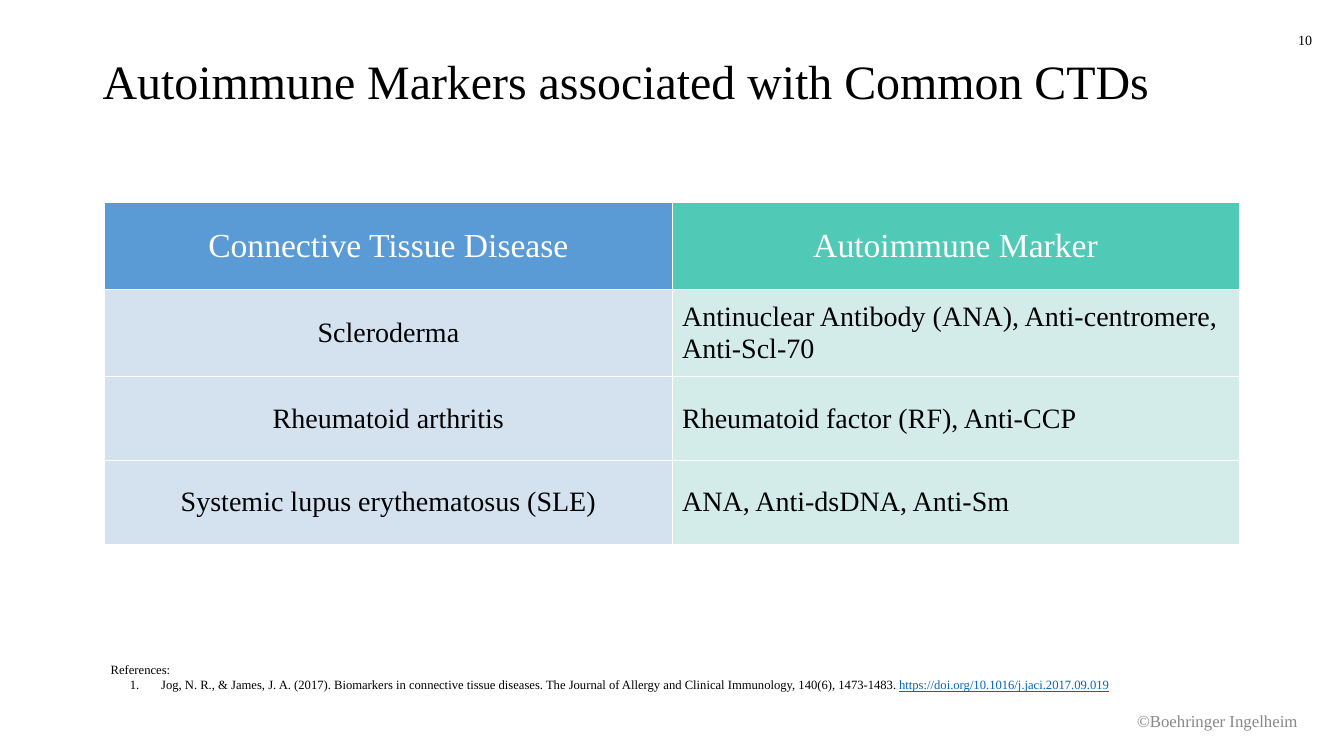
import pptx
import pptx.dml.color
import pptx.enum.text
import pptx.oxml
import pptx.oxml.ns
import pptx.util
from lxml import etree

Inches = pptx.util.Inches
Pt = pptx.util.Pt
RGBColor = pptx.dml.color.RGBColor
ALIGN = pptx.enum.text.PP_ALIGN
MIDDLE = pptx.enum.text.MSO_ANCHOR.MIDDLE
qn = pptx.oxml.ns.qn

FONT = "Times New Roman"
BLACK = RGBColor(0x00, 0x00, 0x00)
WHITE = RGBColor(0xFF, 0xFF, 0xFF)
GRAY = RGBColor(0x88, 0x88, 0x88)
LINK_BLUE = RGBColor(0x05, 0x63, 0xC1)
HEADER_FILLS = (RGBColor(0x5B, 0x9B, 0xD5), RGBColor(0x50, 0xC9, 0xB6))
BODY_FILLS = (RGBColor(0xCF, 0xDE, 0xEF), RGBColor(0xCD, 0xEA, 0xE8))
BODY_OPACITY = 88

TITLE = "Autoimmune Markers associated with Common CTDs"
PAGE_NUMBER = "10"
COPYRIGHT = "©Boehringer Ingelheim"
MARKERS = [
    ("Connective Tissue Disease", "Autoimmune Marker"),
    ("Scleroderma", "Antinuclear Antibody (ANA), Anti-centromere, Anti-Scl-70"),
    ("Rheumatoid arthritis", "Rheumatoid factor (RF), Anti-CCP"),
    ("Systemic lupus erythematosus (SLE)", "ANA, Anti-dsDNA, Anti-Sm"),
]
REFERENCES_HEADING = "References:"
CITATION = (
    "Jog, N. R., & James, J. A. (2017). Biomarkers in connective tissue diseases. "
    "The Journal of Allergy and Clinical Immunology, 140(6), 1473-1483. "
)
CITATION_LINK = "https://doi.org/10.1016/j.jaci.2017.09.019"

TABLE_BOX = (1.04, 2.01, 11.25, 3.35)
HEADER_HEIGHT, BODY_HEIGHT = 0.86, 0.83


def style_font(font, size, color):
    font.name = FONT
    font.size = Pt(size)
    font.color.rgb = color


def add_text(slide, box, text, size, color=BLACK, align=ALIGN.LEFT):
    shape = slide.shapes.add_textbox(*map(Inches, box))
    frame = shape.text_frame
    frame.word_wrap = True
    frame.vertical_anchor = MIDDLE
    frame.text = text
    for paragraph in frame.paragraphs:
        paragraph.alignment = align
        style_font(paragraph.runs[0].font, size, color)
    return frame


def add_borders(cell):
    properties = cell._tc.get_or_add_tcPr()
    for side in ("lnL", "lnR", "lnT", "lnB"):
        line = etree.SubElement(properties, qn(f"a:{side}"), w=str(Pt(0.75)))
        fill = etree.SubElement(line, qn("a:solidFill"))
        etree.SubElement(fill, qn("a:srgbClr"), val=str(WHITE))


def fill_cell(cell, color, opacity=100):
    cell.fill.solid()
    cell.fill.fore_color.rgb = color
    if opacity < 100:
        color_element = cell._tc.tcPr.find(f"{qn('a:solidFill')}/{qn('a:srgbClr')}")
        etree.SubElement(color_element, qn("a:alpha"), val=str(opacity * 1000))


def add_marker_table(slide):
    table = slide.shapes.add_table(
        len(MARKERS), len(MARKERS[0]), *map(Inches, TABLE_BOX)
    ).table
    for row_index, row in enumerate(MARKERS):
        header = row_index == 0
        table.rows[row_index].height = Inches(HEADER_HEIGHT if header else BODY_HEIGHT)
        for column_index, text in enumerate(row):
            cell = table.cell(row_index, column_index)
            add_borders(cell)
            if header:
                fill_cell(cell, HEADER_FILLS[column_index])
            else:
                fill_cell(cell, BODY_FILLS[column_index], BODY_OPACITY)
            cell.vertical_anchor = MIDDLE
            cell.margin_left = cell.margin_right = Inches(0.1)
            cell.margin_top = cell.margin_bottom = Inches(0.1)
            cell.text = text
            paragraph = cell.text_frame.paragraphs[0]
            centered = header or column_index == 0
            paragraph.alignment = ALIGN.CENTER if centered else ALIGN.LEFT
            font = paragraph.runs[0].font
            style_font(font, 24 if header else 20, WHITE if header else BLACK)
            font.bold = False


def add_references(slide):
    frame = add_text(
        slide, (1, 6.52, 11.07, 0.4), f"{REFERENCES_HEADING}\n{CITATION}", 9
    )
    frame.vertical_anchor = pptx.enum.text.MSO_ANCHOR.TOP
    citation = frame.paragraphs[1]
    properties = citation._p.get_or_add_pPr()
    properties.set("marL", str(Inches(0.5)))
    properties.set("indent", str(Inches(-0.31)))
    bullet_color = etree.SubElement(properties, qn("a:buClr"))
    etree.SubElement(bullet_color, qn("a:srgbClr"), val=str(BLACK))
    etree.SubElement(properties, qn("a:buFont"), typeface=FONT)
    etree.SubElement(properties, qn("a:buAutoNum"), type="arabicPeriod")
    link = citation.add_run()
    link.text = CITATION_LINK
    style_font(link.font, 9, LINK_BLUE)
    link.font.underline = True


def main():
    presentation = pptx.Presentation()
    presentation.slide_width = Inches(13.33)
    presentation.slide_height = Inches(7.5)
    slide = presentation.slides.add_slide(presentation.slide_layouts[6])

    add_text(slide, (12.69, 0.15, 0.51, 0.5), PAGE_NUMBER, 10, align=ALIGN.CENTER)
    add_text(slide, (8.47, 6.95, 4.5, 0.4), COPYRIGHT, 12, GRAY, ALIGN.RIGHT)
    title = add_text(slide, (0.92, 0.4, 11.5, 0.87), TITLE, 34.2)
    title.paragraphs[0].line_spacing = 0.9
    add_references(slide)
    add_marker_table(slide)
    presentation.save("out.pptx")


if __name__ == "__main__":
    main()
